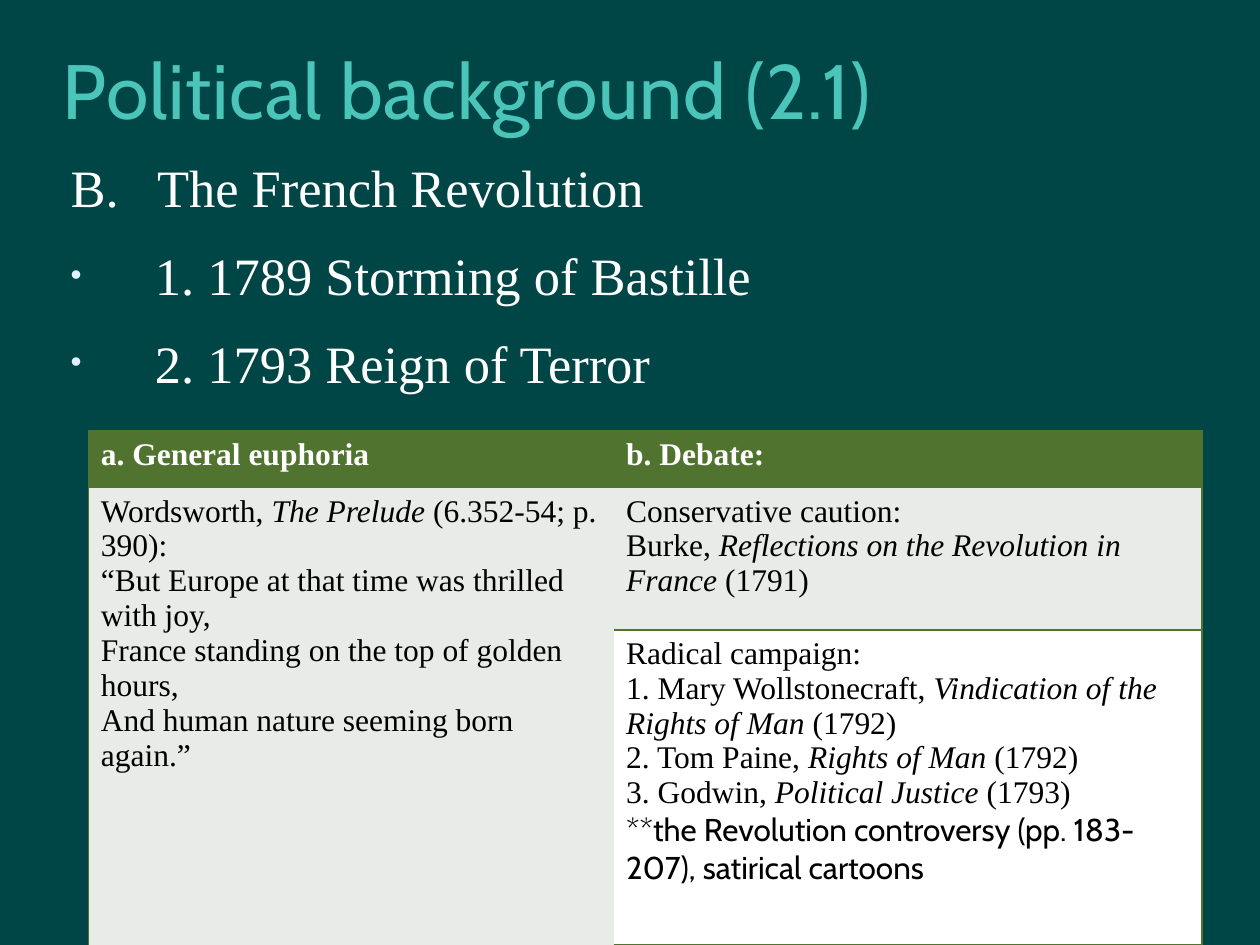
from lxml.etree import SubElement
from pptx import Presentation
from pptx.dml.color import RGBColor
from pptx.enum.text import MSO_ANCHOR, MSO_AUTO_SIZE, PP_ALIGN
from pptx.oxml.ns import qn
from pptx.util import Cm, Pt

SERIF, SANS = "Times New Roman", "Cabin"
GREEN, GREY, WHITE, BLACK = "50742F", "E9EBE8", "FFFFFF", "000000"
NO_STYLE = "{2D5ABB26-0587-4C30-8999-92F81FD0307C}"

OUTLINE = [
    ("B.   The French Revolution", False),
    ("1. 1789 Storming of Bastille", True),
    ("2. 1793 Reign of Terror", True),
]
EUPHORIA = [
    ["Wordsworth, ", "The Prelude", " (6.352-54; p. 390):"],
    ["“But Europe at that time was thrilled with joy,"],
    ["France standing on the top of golden hours,"],
    ["And human nature seeming born again.”"],
]
CAUTION = [
    ["Conservative caution:"],
    ["Burke, ", "Reflections on the Revolution in France", " (1791)"],
]
CAMPAIGN = [
    ["Radical campaign:"],
    ["1. Mary Wollstonecraft, ", "Vindication of the Rights of Man ", "(1792)"],
    ["2. Tom Paine, ", "Rights of Man ", "(1792)"],
    ["3. Godwin, ", "Political Justice", " (1793)"],
    ["**the Revolution controversy (pp. 183-207), satirical cartoons"],
]


def color(value):
    """Turn a hex string into a colour."""
    return RGBColor.from_string(value)


def set_font(font, name, size, value, bold=False):
    """Give a font its face, size, colour and weight."""
    font.name, font.size, font.bold = name, Pt(size), bold
    font.color.rgb = color(value)


def place(shape, left, top, width, height):
    """Move a shape to a box given in centimetres."""
    shape.left, shape.top = Cm(left), Cm(top)
    shape.width, shape.height = Cm(width), Cm(height)


def set_bullet(paragraph, shown):
    """Give a paragraph a small hanging bullet, or none."""
    properties = paragraph._p.get_or_add_pPr()
    indent = Cm(1.7) if shown else 0
    properties.set("marL", str(indent))
    properties.set("indent", str(-indent))
    if not shown:
        SubElement(properties, qn("a:buNone"))
        return
    bullet_color = SubElement(properties, qn("a:buClr"))
    SubElement(bullet_color, qn("a:srgbClr"), val="E1F0FF")
    SubElement(properties, qn("a:buSzPct"), val="60000")
    SubElement(properties, qn("a:buFont"), typeface="Arial")
    SubElement(properties, qn("a:buChar"), char="•")


def add_title(slide, box):
    """Fill the title placeholder."""
    title = slide.shapes.title
    place(title, *box)
    frame = title.text_frame
    frame.text = "Political background (2.1)"
    frame.vertical_anchor = MSO_ANCHOR.MIDDLE
    frame.auto_size = MSO_AUTO_SIZE.NONE
    paragraph = frame.paragraphs[0]
    paragraph.alignment = PP_ALIGN.LEFT
    set_font(paragraph.font, SANS, 44, "4BC5B9")
    paragraph.runs[0].font._element.set("spc", "50")


def add_outline(slide, box):
    """Fill the body placeholder with the outline."""
    body = slide.placeholders[1]
    place(body, *box)
    frame = body.text_frame
    frame.auto_size = MSO_AUTO_SIZE.NONE
    frame.text = "\n".join(text for text, _ in OUTLINE)
    for index, (paragraph, (_, bulleted)) in enumerate(zip(frame.paragraphs, OUTLINE)):
        paragraph.line_spacing = 1.2
        paragraph.space_before = Pt(7 if index else 0)
        set_bullet(paragraph, bulleted)
        set_font(paragraph.font, SERIF, 30, WHITE)


def set_borders(cell, sides):
    """Draw thin green lines on the named sides of a cell."""
    properties = cell._tc.get_or_add_tcPr()
    for position, side in enumerate(side for side in "LRTB" if side in sides):
        line = properties.makeelement(qn(f"a:ln{side}"), {"w": str(Pt(1))})
        fill = SubElement(line, qn("a:solidFill"))
        SubElement(fill, qn("a:srgbClr"), val=GREEN)
        properties.insert(position, line)


def fill_cell(cell, lines, fill, text_color=BLACK, bold=False):
    """Write lines into a cell, with every second run in italics."""
    cell.fill.solid()
    cell.fill.fore_color.rgb = color(fill)
    frame = cell.text_frame
    for index, parts in enumerate(lines):
        paragraph = frame.add_paragraph() if index else frame.paragraphs[0]
        face = SANS if parts[0].startswith("**") else SERIF
        set_font(paragraph.font, face, 18, text_color, bold)
        for number, part in enumerate(parts):
            run = paragraph.add_run()
            run.text = part
            if number % 2:
                run.font.italic = True


def add_debate_table(slide, left, top, widths, heights):
    """Add the table that sets euphoria against debate."""
    frame = slide.shapes.add_table(
        len(heights), len(widths), Cm(left), Cm(top), Cm(sum(widths)), Cm(sum(heights)))
    table = frame.table
    table._tbl.tblPr.find(qn("a:tableStyleId")).text = NO_STYLE
    for column, width in zip(table.columns, widths):
        column.width = Cm(width)
    for row, height in zip(table.rows, heights):
        row.height = Cm(height)
    table.cell(1, 0).merge(table.cell(2, 0))
    fill_cell(table.cell(0, 0), [["a. General euphoria"]], GREEN, WHITE, True)
    fill_cell(table.cell(0, 1), [["b. Debate:"]], GREEN, WHITE, True)
    fill_cell(table.cell(1, 0), EUPHORIA, GREY)
    fill_cell(table.cell(1, 1), CAUTION, GREY)
    fill_cell(table.cell(2, 1), CAMPAIGN, WHITE)
    for row, edges in enumerate(("TB", "T", "B")):
        set_borders(table.cell(row, 0), "L" + edges)
        set_borders(table.cell(row, 1), "R" + ("B" if row == 1 else edges))


def main():
    """Build and save the slide."""
    presentation = Presentation()
    presentation.slide_width, presentation.slide_height = Cm(25.4), Cm(19.05)
    slide = presentation.slides.add_slide(presentation.slide_layouts[1])
    slide.background.fill.solid()
    slide.background.fill.fore_color.rgb = color("004646")
    add_title(slide, (1, 0.2, 21.6, 3.18))
    add_outline(slide, (1.17, 2.74, 22.23, 12.5))
    add_debate_table(slide, 1.78, 8.69, (10.59, 11.86), (1.14, 2.87, 6.35))
    presentation.save("out.pptx")


if __name__ == "__main__":
    main()
